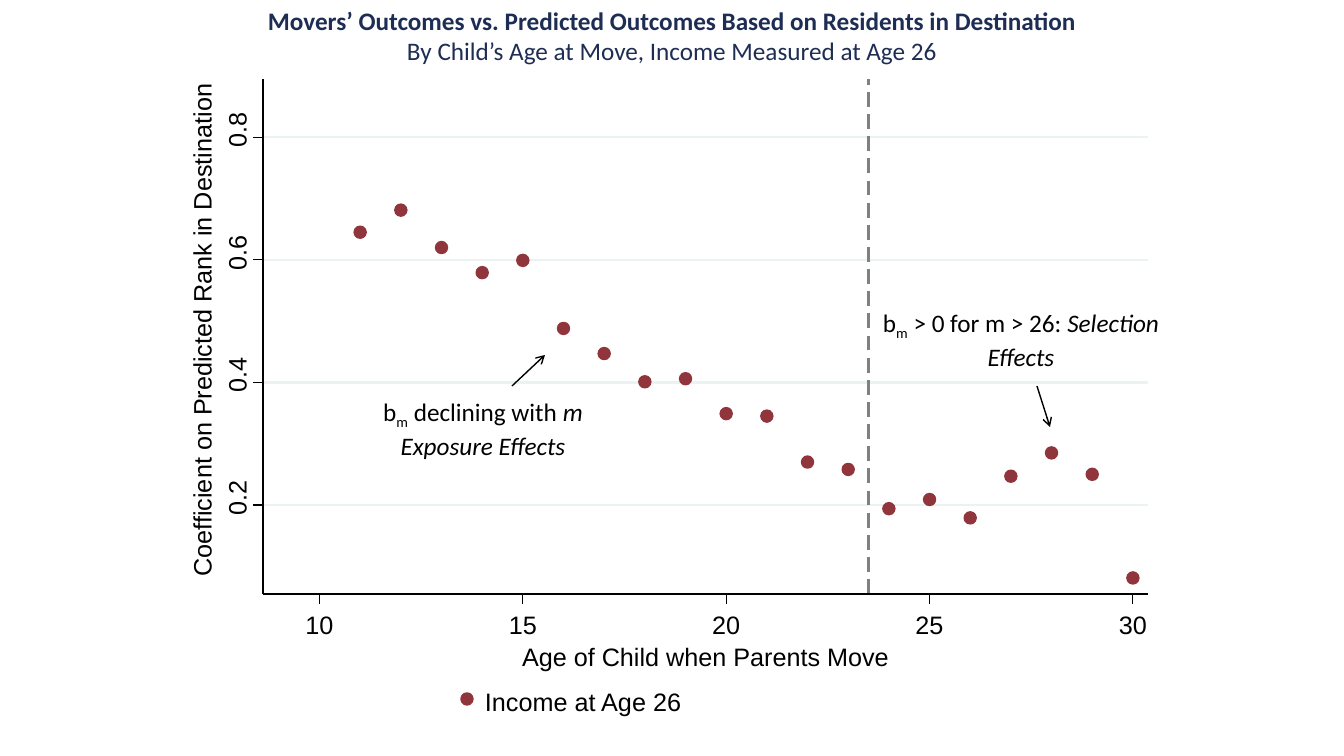
from lxml import etree
from pptx import Presentation
from pptx.dml.color import RGBColor
from pptx.enum.shapes import MSO_CONNECTOR as Conn, MSO_SHAPE as Shape
from pptx.enum.text import MSO_ANCHOR as Anchor, MSO_AUTO_SIZE as Auto, PP_ALIGN as Align
from pptx.oxml.ns import qn
from pptx.util import Pt

# Content
TITLE = ["Movers’ Outcomes vs. Predicted Outcomes Based on Residents in Destination",
         "By Child’s Age at Move, Income Measured at Age 26"]
FIRST = 11  # age of the first point
COEFS = [64.5, 68.1, 62, 57.9, 59.9, 48.8, 44.7, 40.1, 40.6, 34.9,
         34.5, 27, 25.8, 19.4, 20.9, 17.9, 24.7, 28.5, 25, 8.1]  # in hundredths
CUTOFF = 23.5
AGES = [10, 15, 20, 25, 30]
RANKS = [20, 40, 60, 80]  # in hundredths
# Text, box, turn
LABELS = [
    ("Age of Child when Parents Move", (522, 641, 370, 30), 0),
    ("Income at Age 26", (485, 686, 198, 30), 0),
    ("Coefficient on Predicted Rank in Destination", (-47, 313, 497, 30), 270),
]
# Box, then runs as (text, style)
NOTES = [
    ((865, 302, 312, 72), [("b", ""), ("m", "sub"), (" > 0 for m > 26: ", ""),
                           ("Selection Effects", "italic")]),
    ((327, 391, 312, 72), [("b", ""), ("m", "sub"), (" declining with ", ""),
                           ("m Exposure Effects", "italic")]),
]
ARROWS = [(1037, 386, 1050, 427), (512, 386, 545, 355)]
COLORS = {"navy": "1E2D53", "black": "000000", "maroon": "90353B",
          "grid": "EAF2F3", "gray": "808080"}

# Places, in px
LEFT, TOP, RIGHT, BASE = 263, 79, 1148, 594
KEY = (467, 699)  # centre of the legend dot
DOT, TICK = 11, 10
SCALE = 914400 / 100.8


def emu(*nums):
    return [round(n * SCALE) for n in nums]


def rgb(name):
    return RGBColor.from_string(COLORS[name])


def at_age(age):
    return 319.5 + (age - 10) * 40.67


def at_rank(rank):
    return 505 - (rank - 20) * 6.13


def style(font, face, color):
    font.size, font.name, font.color.rgb = Pt(18), face, rgb(color)


def add_line(slide, ends, color="black", width=0.88):
    line = slide.shapes.add_connector(Conn.STRAIGHT, *emu(*ends))
    line.line.color.rgb, line.line.width = rgb(color), Pt(width)
    etree.SubElement(line._element.spPr, qn("a:effectLst"))
    return line.line._get_or_add_ln()


def add_dot(slide, x, y):
    dot = slide.shapes.add_shape(Shape.OVAL, *emu(x - DOT / 2, y - DOT / 2, DOT, DOT))
    dot.shadow.inherit = False
    dot.fill.solid()
    dot.fill.fore_color.rgb = dot.line.color.rgb = rgb("maroon")
    dot.line.width = Pt(1.75)


def add_label(slide, text, box, turn=0):
    label = slide.shapes.add_textbox(*emu(*box))
    label.rotation = turn
    frame = label.text_frame
    frame.margin_left = frame.margin_right = frame.margin_top = frame.margin_bottom = 0
    frame.word_wrap, frame.auto_size = False, Auto.SHAPE_TO_FIT_TEXT
    frame.text = text
    style(frame.paragraphs[0].runs[0].font, "Arial", "black")


def add_title(slide):
    title = slide.shapes.title
    title.left, title.top, title.width, title.height = emu(168, 0, 1008, 72)
    frame = title.text_frame
    frame.text = "\n".join(TITLE)
    frame.vertical_anchor, frame.auto_size = Anchor.TOP, Auto.NONE
    for i, para in enumerate(frame.paragraphs):
        para.alignment = Align.CENTER
        style(para.runs[0].font, "Calibri", "navy")
        para.runs[0].font.bold = i == 0


def add_plot(slide):
    # Gridlines and dashed cutoff
    for rank in RANKS:
        y = at_rank(rank)
        add_line(slide, (LEFT, y, RIGHT, y), "grid", 1.75)
    x = at_age(CUTOFF)
    ln = add_line(slide, (x, BASE, x, TOP), "gray", 1.75)
    dash = etree.SubElement(ln, qn("a:custDash"))
    etree.SubElement(dash, qn("a:ds"), d="600000", sp="300000")

    # Points and legend key
    for age, coef in enumerate(COEFS, FIRST):
        add_dot(slide, at_age(age), at_rank(coef))
    add_dot(slide, *KEY)

    # Axes, ticks and tick labels
    add_line(slide, (LEFT, BASE, LEFT, TOP))
    add_line(slide, (LEFT, BASE, RIGHT, BASE))
    for rank in RANKS:
        y = at_rank(rank)
        add_line(slide, (LEFT, y, LEFT - TICK, y))
        add_label(slide, f"{rank / 100:.1f}", (219, y - 22, 35, 30), 270)
    for age in AGES:
        x = at_age(age)
        add_line(slide, (x, BASE, x, BASE + TICK))
        add_label(slide, str(age), (x - 14, 609, 28, 30))
    for text, box, turn in LABELS:
        add_label(slide, text, box, turn)


def add_note(slide, box, parts):
    frame = slide.shapes.add_textbox(*emu(*box)).text_frame
    frame.word_wrap = True
    para = frame.paragraphs[0]
    para.alignment = Align.CENTER
    for text, look in parts:
        run = para.add_run()
        run.text = text
        style(run.font, "Calibri", "black")
        run.font.italic = look == "italic"
        if look == "sub":
            run._r.get_or_add_rPr().set("baseline", "-25000")


def main():
    deck = Presentation()
    deck.slide_width, deck.slide_height = emu(1344, 756)
    slide = deck.slides.add_slide(deck.slide_layouts[5])
    add_title(slide)
    add_plot(slide)

    # Notes and arrows
    for box, parts in NOTES:
        add_note(slide, box, parts)
    for ends in ARROWS:
        ln = add_line(slide, ends, width=1)
        etree.SubElement(ln, qn("a:tailEnd"), type="arrow")
    deck.save("out.pptx")


if __name__ == "__main__":
    main()
